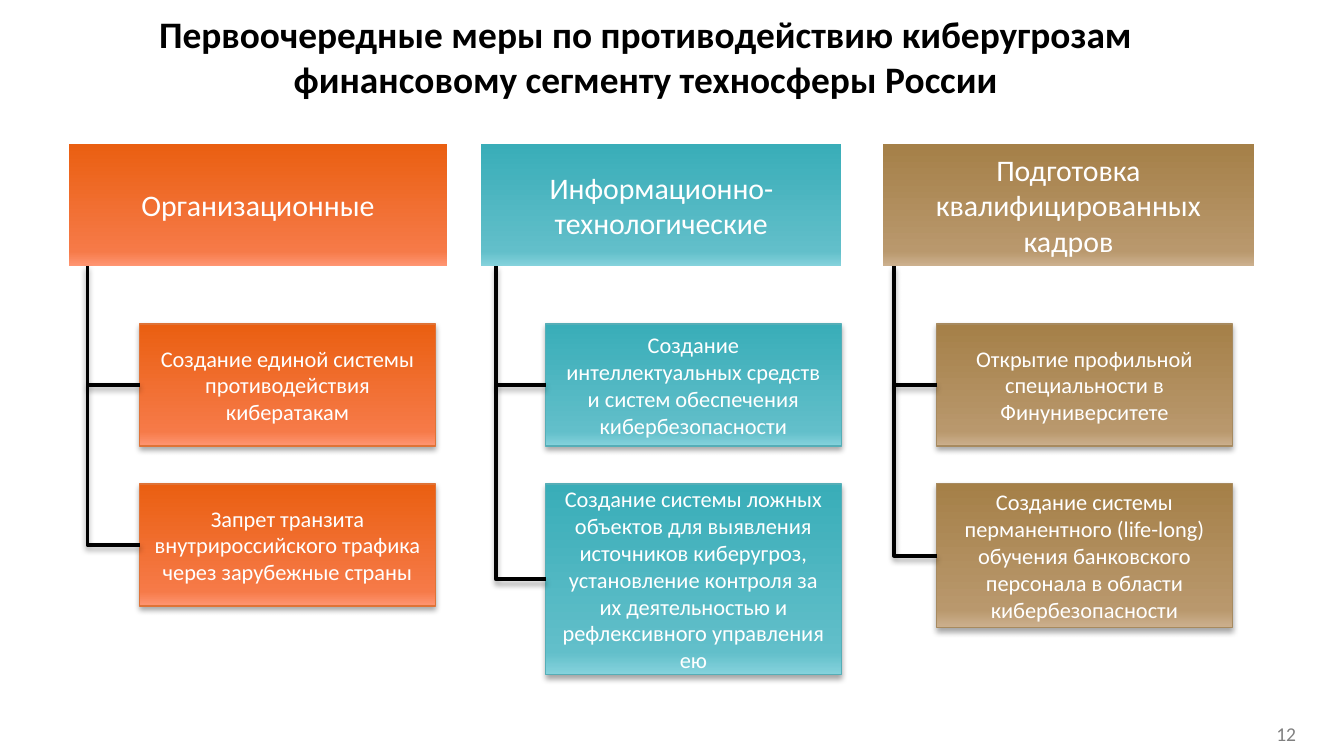
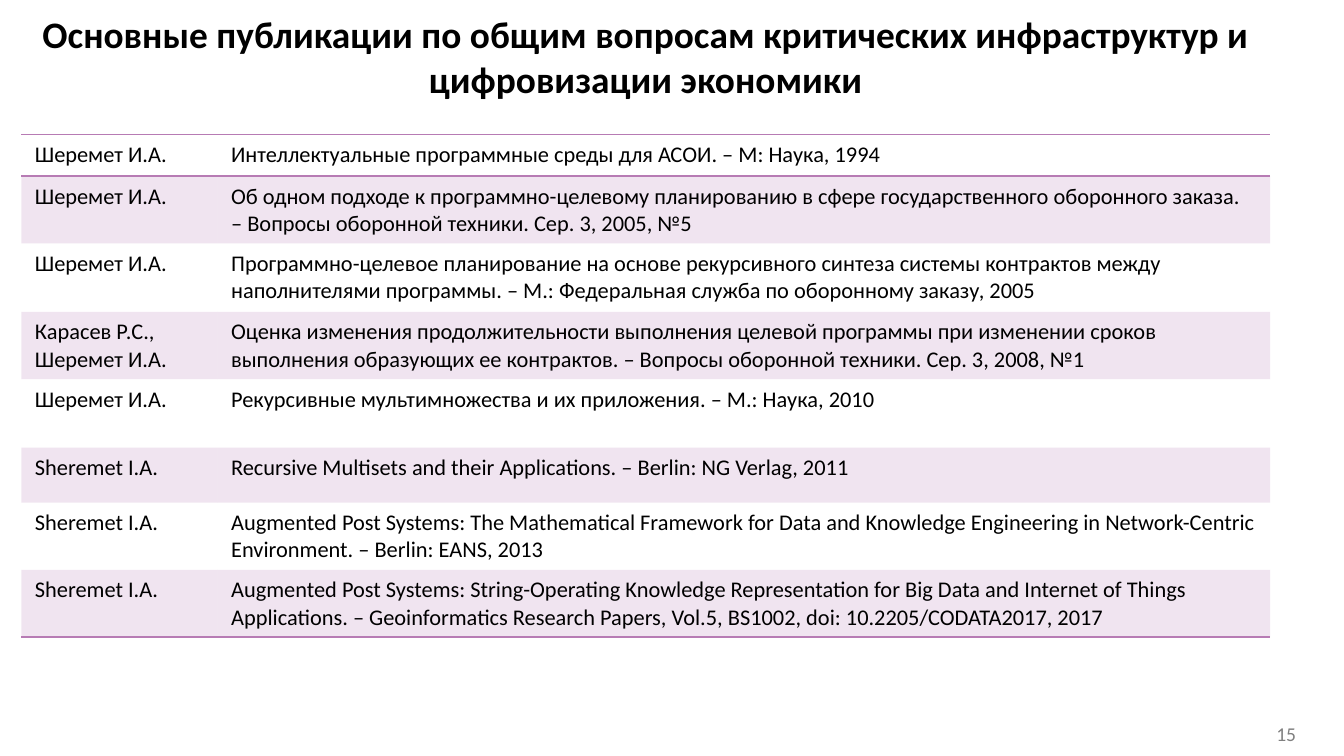
"""Build two slides: a chart of cyber measures and a list of publications."""
from pptx import Presentation
from pptx.dml.color import RGBColor
from pptx.enum.shapes import MSO_CONNECTOR as LINE, MSO_SHAPE as SHAPE
from pptx.enum.text import MSO_ANCHOR as ANCHOR, PP_ALIGN as ALIGN
from pptx.oxml import parse_xml
from pptx.oxml.ns import nsdecls, qn
from pptx.util import Inches, Pt

COLORS = {"black": "000000", "white": "FFFFFF", "gray": "808080", "mauve": "B77BB4"}
TONES = {
    "orange": (("FF9673", "F67A48", "EA5F11"), "DF7337"),
    "teal": (("85D2DC", "62BFCA", "39ADB8"), "55AEB7"),
    "brown": (("CCB08E", "B9986D", "A58048"), "A78A5F"),
}
FONT = "Calibri"
PLAIN = "{2D5ABB26-0587-4C30-8999-92F81FD0307C}"
WIDTH = 10

MEASURES = [
    {"head": "Организационные", "tone": "orange", "left": 0.51, "width": 2.82,
     "trunk": 0.65, "box": 1.04, "last": 0.91,
     "items": ["Создание единой системы противодействия кибератакам",
               "Запрет транзита внутрироссийского трафика через зарубежные страны"]},
    {"head": "Информационно-технологические", "tone": "teal", "left": 3.58, "width": 2.68,
     "trunk": 3.69, "box": 4.06, "last": 1.42,
     "items": ["Создание интеллектуальных средств и систем обеспечения кибербезопасности",
               "Создание системы ложных объектов для выявления источников киберугроз, "
               "установление контроля за их деятельностью и рефлексивного управления ею"]},
    {"head": "Подготовка квалифицированных кадров", "tone": "brown", "left": 6.57,
     "width": 2.76, "trunk": 6.65, "box": 6.97, "last": 1.07,
     "items": ["Открытие профильной специальности в Финуниверситете",
               "Создание системы перманентного (life-long) обучения банковского "
               "персонала в области кибербезопасности"]},
]
HEAD_TOP, HEIGHT, BOX_WIDTH = 1.07, 0.91, 2.2
BOX_TOPS = (2.41, 3.6)

PAPERS = [
    ("Шеремет И.А.", "Интеллектуальные программные среды для АСОИ. – М: Наука, 1994", 0.31),
    ("Шеремет И.А.", "Об одном подходе к программно-целевому планированию в сфере "
     "государственного оборонного заказа. – Вопросы оборонной техники. Сер. 3, 2005, №5", 0.5),
    ("Шеремет И.А.", "Программно-целевое планирование на основе рекурсивного синтеза системы "
     "контрактов между наполнителями программы. – М.: Федеральная служба по оборонному "
     "заказу, 2005", 0.51),
    ("Карасев Р.С., Шеремет И.А.", "Оценка изменения продолжительности выполнения целевой "
     "программы при изменении сроков выполнения образующих ее контрактов. – Вопросы "
     "оборонной техники. Сер. 3, 2008, №1", 0.5),
    ("Шеремет И.А.", "Рекурсивные мультимножества и их приложения. – М.: Наука, 2010", 0.51),
    ("Sheremet I.A.", "Recursive Multisets and their Applications. – Berlin: NG Verlag, 2011", 0.41),
    ("Sheremet I.A.", "Augmented Post Systems: The Mathematical Framework for Data and Knowledge "
     "Engineering in Network-Centric Environment. – Berlin: EANS, 2013", 0.5),
    ("Sheremet I.A.", "Augmented Post Systems: String-Operating Knowledge Representation for Big "
     "Data and Internet of Things Applications. – Geoinformatics Research Papers, Vol.5, "
     "BS1002, doi: 10.2205/CODATA2017, 2017", 0.5),
]
COLUMNS = (1.46, 7.83)


def rgb(color):
    return RGBColor.from_string(color)


def write(frame, text, size=12, color="black", bold=False, align=ALIGN.CENTER):
    frame.word_wrap = True
    para = frame.paragraphs[0]
    para.text = text
    para.alignment = align
    for run in para.runs:
        font = run.font
        font.name, font.size, font.bold = FONT, Pt(size), bold
        font.color.rgb = rgb(COLORS[color])


def add_text(slide, text, *place, **look):
    frame = slide.shapes.add_textbox(*map(Inches, place)).text_frame
    frame.vertical_anchor = ANCHOR.MIDDLE
    write(frame, text, **look)
    return frame


def add_page(deck, title, number):
    slide = deck.slides.add_slide(deck.slide_layouts[6])
    note = add_text(slide, number, 9.27, 5.3, 0.6, 0.32, size=10.5, color="gray")
    note.margin_left = note.margin_right = Inches(0.09)
    note.margin_top = note.margin_bottom = Inches(0.09)
    add_text(slide, title, 0.04, 0.06, 9.53, 0.72, size=20, bold=True)
    return slide


def add_shade(shape):
    shape._element.spPr.append(parse_xml(
        f'<a:effectLst {nsdecls("a")}><a:outerShdw blurRad="{Pt(3.1)}" dist="{Pt(1.8)}" '
        f'dir="5400000" rotWithShape="0"><a:srgbClr val="{COLORS["black"]}">'
        '<a:alpha val="35000"/></a:srgbClr></a:outerShdw></a:effectLst>'))


def add_box(slide, text, tone, *place, size=12, framed=True):
    box = slide.shapes.add_shape(SHAPE.RECTANGLE, *map(Inches, place))
    stops, edge = TONES[tone]
    box.fill.gradient()
    marks = "".join(f'<a:gs pos="{pos}"><a:srgbClr val="{color}"/></a:gs>'
                    for pos, color in zip((0, 12000, 100000), stops))
    props = box._element.spPr
    props.replace(props.find(qn("a:gradFill")), parse_xml(
        f'<a:gradFill {nsdecls("a")} rotWithShape="1"><a:gsLst>{marks}</a:gsLst>'
        '<a:lin ang="16200000" scaled="0"/></a:gradFill>'))
    if framed:
        box.line.color.rgb = rgb(edge)
        box.line.width = Pt(0.75)
        add_shade(box)
    else:
        box.line.fill.background()
        box.shadow.inherit = False
    box.text_frame.vertical_anchor = ANCHOR.MIDDLE
    write(box.text_frame, text, size=size, color="white")
    return box


def add_line(slide, kind, *ends):
    line = slide.shapes.add_connector(kind, *map(Inches, ends))
    line.line.color.rgb = rgb(COLORS["black"])
    line.line.width = Pt(2)
    add_shade(line)
    return line


def add_bend(slide, left, top, right, bottom):
    mid_x, mid_y = (left + right) / 2, (top + bottom) / 2
    half_w, half_h = (right - left) / 2, (bottom - top) / 2
    bend = add_line(slide, LINE.ELBOW, mid_x - half_h, mid_y - half_w,
                    mid_x + half_h, mid_y + half_w)
    props = bend._element.spPr
    props.find(qn("a:prstGeom")).set("prst", "bentConnector2")
    frame = props.find(qn("a:xfrm"))
    frame.set("rot", "16200000")
    frame.set("flipH", "1")


def add_branch(slide, head, tone, left, width, trunk, box, last, items):
    add_box(slide, head, tone, left, HEAD_TOP, width, HEIGHT, size=16, framed=False)
    first, _ = [add_box(slide, text, tone, box, top, BOX_WIDTH, height)
                for text, top, height in zip(items, BOX_TOPS, (HEIGHT, last))]
    mid = BOX_TOPS[0] + HEIGHT / 2
    twig = add_line(slide, LINE.STRAIGHT, box, mid, trunk, mid)
    twig.begin_connect(first, 1)
    add_bend(slide, trunk, HEAD_TOP + HEIGHT, box, BOX_TOPS[1] + last / 2)


def add_rule(cell, side):
    cell._tc.get_or_add_tcPr().insert(0, parse_xml(
        f'<a:{side} {nsdecls("a")} w="{Pt(1)}"><a:solidFill>'
        f'<a:srgbClr val="{COLORS["mauve"]}"/></a:solidFill></a:{side}>'))


def add_papers(slide):
    high = sum(paper[2] for paper in PAPERS)
    shape = slide.shapes.add_table(len(PAPERS), len(COLUMNS), *map(
        Inches, (0.16, 1, sum(COLUMNS), high)))
    table = shape.table
    table.first_row = table.horz_banding = False
    table._tbl.tblPr.find(qn("a:tableStyleId")).text = PLAIN
    for col, width in zip(table.columns, COLUMNS):
        col.width = Inches(width)
    for num, (*texts, height) in enumerate(PAPERS):
        table.rows[num].height = Inches(height)
        for cell, text in zip(table.rows[num].cells, texts):
            write(cell.text_frame, text, align=ALIGN.LEFT)
            if num % 2:
                cell.fill.solid()
                cell.fill.fore_color.rgb = rgb(COLORS["mauve"])
                tint = cell._tc.tcPr.find(".//" + qn("a:srgbClr"))
                tint.append(parse_xml(f'<a:alpha {nsdecls("a")} val="20000"/>'))
            else:
                cell.fill.background()
            if num in (0, len(PAPERS) - 1):
                add_rule(cell, "lnB")
            if num == 0:
                add_rule(cell, "lnT")


def main():
    deck = Presentation()
    deck.slide_width, deck.slide_height = Inches(WIDTH), Inches(WIDTH * 9 / 16)
    slide = add_page(deck, "Первоочередные меры по противодействию киберугрозам\n"
                     "финансовому сегменту техносферы России", "12")
    for branch in MEASURES:
        add_branch(slide, **branch)
    slide = add_page(deck, "Основные публикации по общим вопросам критических "
                     "инфраструктур и цифровизации экономики", "15")
    add_papers(slide)
    deck.save("out.pptx")


if __name__ == "__main__":
    main()
